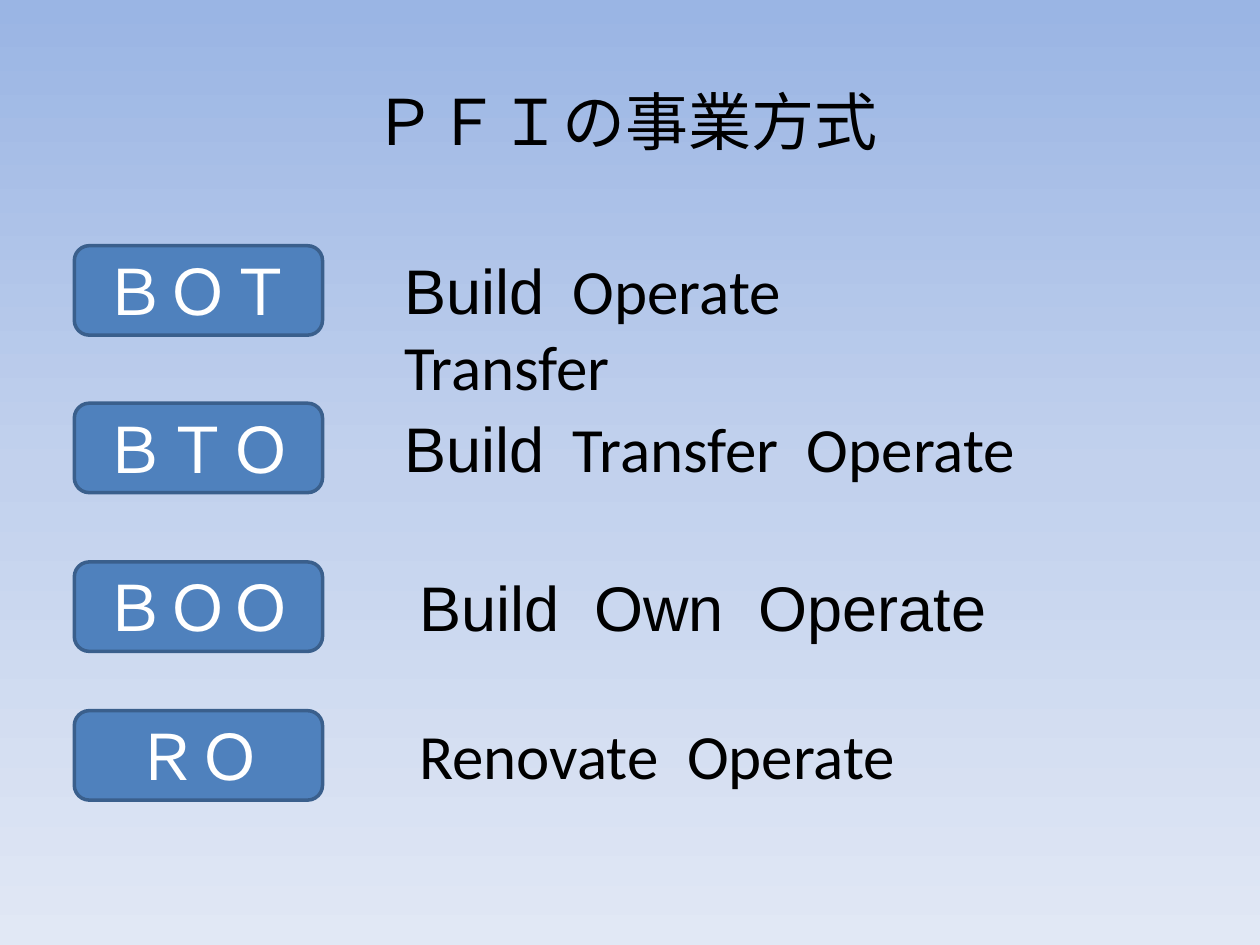
from copy import deepcopy
from dataclasses import dataclass

from pptx import Presentation
from pptx.dml.color import RGBColor
from pptx.enum.shapes import MSO_SHAPE
from pptx.enum.text import MSO_ANCHOR, MSO_AUTO_SIZE, PP_ALIGN
from pptx.util import Inches, Pt


@dataclass(frozen=True)
class Theme:
    background: tuple = ((0, "9AB5E4"), (0.5, "C2D1ED"), (1, "E1E8F5"))
    badge: str = "4F81BD"
    badge_line: str = "3A5F8C"
    badge_text: str = "FFFFFF"
    text: str = "000000"
    font: str = "Calibri"
    latin_font: str = "Arial"
    size: int = 36
    line_width: int = 2


ROW_HEIGHT = 0.71
BADGE_LEFT, BADGE_WIDTH = 0.59, 1.97
TEXT_LEFT, INDENTED_LEFT = 3.11, 3.23

# abbreviation, row top, text left, text width, Arial part, Calibri part
METHODS = [
    ("ＢＯＴ", 1.95, TEXT_LEFT, 5.04, "Build", "  Operate  Transfer"),
    ("ＢＴＯ", 3.2, TEXT_LEFT, 5.28, "Build", "  Transfer  Operate"),
    ("ＢＯＯ", 4.46, INDENTED_LEFT, 5.04, "Build  Own  Operate", ""),
    ("ＲＯ", 5.64, INDENTED_LEFT, 4.84, "", "Renovate  Operate"),
]


class SlideBuilder:
    def __init__(self, slide, theme):
        self.slide = slide
        self.theme = theme

    def style(self, font, color, name=None):
        font.size = Pt(self.theme.size)
        font.color.rgb = RGBColor.from_string(color)
        font.name = name or self.theme.font

    def background(self):
        fill = self.slide.background.fill
        fill.gradient()
        fill.gradient_angle = 270
        stop_list = self.slide.element.xpath(".//p:bg//a:gsLst")[0]
        stop_list.insert(1, deepcopy(stop_list[0]))
        for stop, (position, color) in zip(fill.gradient_stops, self.theme.background):
            stop.position = position
            stop.color.rgb = RGBColor.from_string(color)

    def centre(self, frame, text, color):
        frame.text = text
        frame.word_wrap = True
        frame.vertical_anchor = MSO_ANCHOR.MIDDLE
        paragraph = frame.paragraphs[0]
        paragraph.alignment = PP_ALIGN.CENTER
        self.style(paragraph.font, color)

    def title(self, text, left, top, width):
        title = self.slide.shapes.title
        title.left, title.top = Inches(left), Inches(top)
        title.width, title.height = Inches(width), Inches(ROW_HEIGHT)
        self.centre(title.text_frame, text, self.theme.text)

    def badge(self, text, top):
        badge = self.slide.shapes.add_shape(
            MSO_SHAPE.ROUNDED_RECTANGLE, Inches(BADGE_LEFT), Inches(top),
            Inches(BADGE_WIDTH), Inches(ROW_HEIGHT))
        badge.shadow.inherit = False
        badge.fill.solid()
        badge.fill.fore_color.rgb = RGBColor.from_string(self.theme.badge)
        badge.line.color.rgb = RGBColor.from_string(self.theme.badge_line)
        badge.line.width = Pt(self.theme.line_width)
        self.centre(badge.text_frame, text, self.theme.badge_text)

    def meaning(self, left, top, width, arial_part, calibri_part):
        frame = self.slide.shapes.add_textbox(
            Inches(left), Inches(top), Inches(width), Inches(ROW_HEIGHT)).text_frame
        frame.word_wrap = True
        frame.auto_size = MSO_AUTO_SIZE.SHAPE_TO_FIT_TEXT
        paragraph = frame.paragraphs[0]
        parts = ((arial_part, self.theme.latin_font), (calibri_part, self.theme.font))
        for text, font_name in parts:
            if text:
                run = paragraph.add_run()
                run.text = text
                self.style(run.font, self.theme.text, font_name)


def main():
    presentation = Presentation()
    presentation.slide_width, presentation.slide_height = Inches(10), Inches(7.5)
    title_only = presentation.slide_layouts[5]
    builder = SlideBuilder(presentation.slides.add_slide(title_only), Theme())
    builder.background()
    builder.title("ＰＦＩの事業方式", left=1.46, top=0.6, width=7.01)
    for abbreviation, top, *_ in METHODS:
        builder.badge(abbreviation, top)
    for _, top, left, width, arial_part, calibri_part in METHODS:
        builder.meaning(left, top, width, arial_part, calibri_part)
    presentation.save("out.pptx")


if __name__ == "__main__":
    main()
